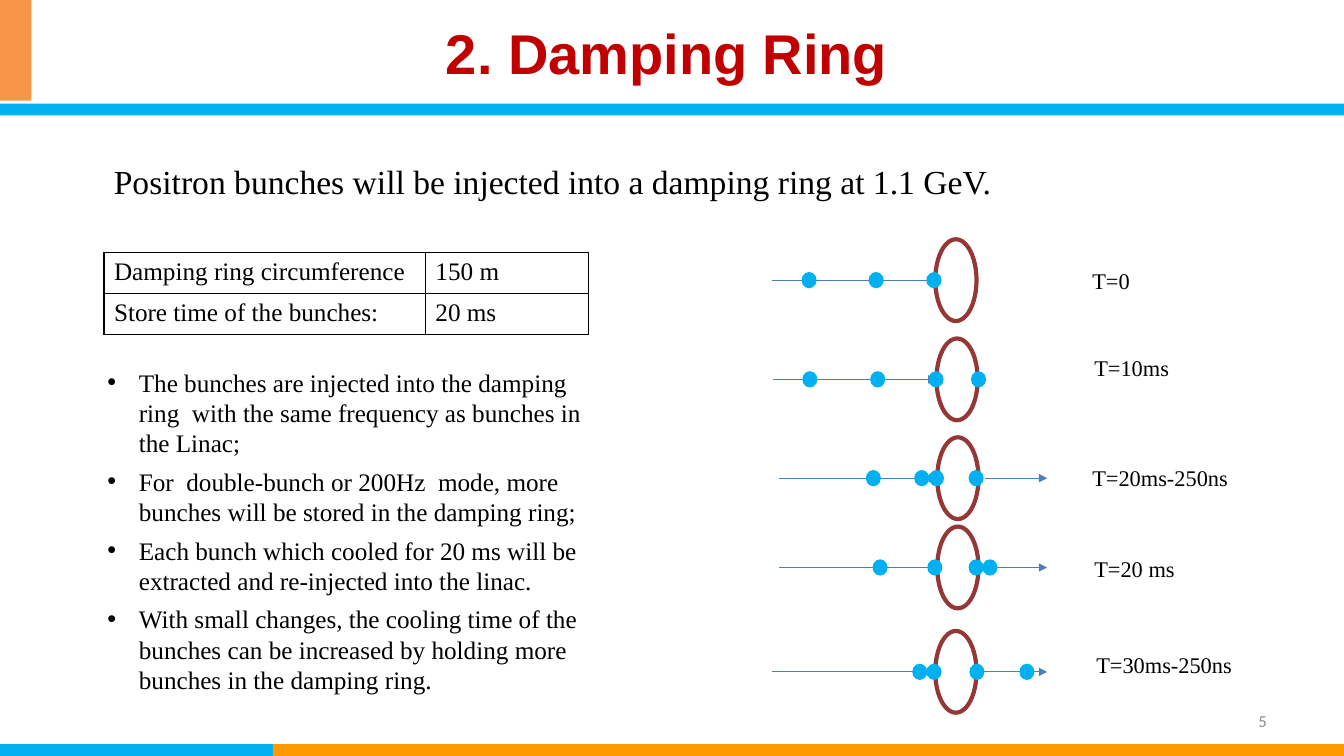
from dataclasses import dataclass
from lxml.etree import SubElement
from pptx import Presentation
from pptx.dml.color import RGBColor
from pptx.enum.shapes import MSO_CONNECTOR, MSO_SHAPE
from pptx.enum.text import MSO_ANCHOR, PP_ALIGN
from pptx.oxml import parse_xml
from pptx.oxml.ns import nsdecls, qn
from pptx.util import Cm, Pt


@dataclass(frozen=True)
class Theme:
    sky: str = "00B0F0"
    amber: str = "FF9900"
    peach: str = "F79646"
    red: str = "C00000"
    ring: str = "953735"
    beam: str = "4B7EBC"
    ink: str = "000000"
    grey: str = "8C8C8C"
    serif: str = "Times New Roman"
    head: int = 40
    lead: int = 24
    body: int = 18
    label: int = 16
    foot: int = 12


THEME = Theme()
WIDE, HIGH = 33.87, 19.05  # all lengths are in cm

TITLE = "2. Damping Ring"
LEAD = "Positron bunches will be injected into a damping ring at 1.1 GeV."
FACTS = [
    ("Damping ring circumference", "150 m"),
    ("Store time of the bunches:", "20 ms"),
]
COLS, ROW = (8.1, 4.12), 1.03
POINTS = [
    "The bunches are injected into the damping ring  with the same frequency as bunches in the Linac;",
    "For  double-bunch or 200Hz  mode, more bunches will be stored in the damping ring;",
    "Each bunch which cooled for 20 ms will be extracted and re-injected into the linac.",
    "With small changes, the cooling time of the bunches can be increased by holding more bunches in the damping ring.",
]
BANDS = [
    ((0, 18.75, WIDE, 0.3), THEME.sky),
    ((6.88, 18.75, WIDE - 6.88, 0.3), THEME.amber),
    ((0, 2.61, WIDE, 0.3), THEME.sky),
    ((0, 0, 0.79, 2.54), THEME.peach),
]
# label, its left and top, axis height, ring left, beam start, exit start, bunch centres
STAGES = [
    ("T=0", 27.28, 6.6, 7.06, 23.57, 19.46, None, (20.39, 22.08, 23.54)),
    ("T=10ms", 27.33, 8.79, 9.56, 23.6, 19.48, None,
     (20.41, 22.12, 23.59, 24.66)),
    ("T=20ms-250ns", 27.28, 11.56, 12.05, 23.62, 19.63, 24.82,
     (22.01, 23.23, 23.6, 24.6)),
    ("T=20 ms", 27.33, 13.87, 14.3, 23.62, 19.63, 24.82,
     (22.18, 23.56, 24.6, 24.95)),
    ("T=30ms-250ns", 27.38, 16.28, 16.93, 23.57, 19.46, 24.61,
     (23.18, 23.54, 24.62, 25.88)),
]
RING, BUNCH, EXIT = (1.04, 2.06), (0.38, 0.41), 26.39


def rgb(tint):
    return RGBColor.from_string(tint)


def style(para, size, tint=THEME.ink, face=THEME.serif, bold=False):
    looks = {"name": face, "size": Pt(size), "bold": bold}
    for run in para.runs:
        for key, value in looks.items():
            setattr(run.font, key, value)
        run.font.color.rgb = rgb(tint)


def text(slide, box, lines, size, **looks):
    frame = slide.shapes.add_textbox(*map(Cm, box)).text_frame
    frame.word_wrap = True
    frame.text = "\n".join(lines)
    for para in frame.paragraphs:
        style(para, size, **looks)
    return frame


def shape(slide, kind, box, fill=None, line=None):
    item = slide.shapes.add_shape(kind, *map(Cm, box))
    item.shadow.inherit = False
    if fill:
        item.fill.solid()
        item.fill.fore_color.rgb = rgb(fill)
    else:
        item.fill.background()
    if line:
        item.line.color.rgb = rgb(line)
        item.line.width = Pt(3)
    else:
        item.line.fill.background()


def oval(slide, mid, axis, size, **paint):
    """Draw an ellipse round its centre."""
    wide, high = size
    box = (mid - wide / 2, axis - high / 2, wide, high)
    shape(slide, MSO_SHAPE.OVAL, box, **paint)


def arrow(slide, start, end, axis):
    item = slide.shapes.add_connector(
        MSO_CONNECTOR.STRAIGHT, *map(Cm, (start, axis, end, axis)))
    item.line.color.rgb = rgb(THEME.beam)
    item.line.width = Pt(0.75)
    SubElement(item.line._get_or_add_ln(), qn("a:tailEnd"), type="triangle")
    SubElement(item._element.spPr, qn("a:effectLst"))


def stage(slide, label, left, top, axis, ring, start, leave, bunches):
    arrow(slide, start, ring, axis)
    if leave:
        arrow(slide, leave, EXIT, axis)
    oval(slide, ring + RING[0] / 2, axis, RING, line=THEME.ring)
    for mid in bunches:
        oval(slide, mid, axis, BUNCH, fill=THEME.sky)
    text(slide, (left, top, 4.83, 0.94), [label], THEME.label)


def border(cell):
    props = cell._tc.get_or_add_tcPr()
    for spot, side in enumerate("LRTB"):
        props.insert(spot, parse_xml(
            f'<a:ln{side} {nsdecls("a")} w="12700"><a:solidFill>'
            f'<a:srgbClr val="{THEME.ink}"/></a:solidFill></a:ln{side}>'))


def facts(slide):
    box = (2.62, 6.37, sum(COLS), ROW * len(FACTS))
    table = slide.shapes.add_table(
        len(FACTS), len(COLS), *map(Cm, box)).table
    table.first_row = table.horz_banding = False
    for col, wide in zip(table.columns, COLS):
        col.width = Cm(wide)
    for r, row in enumerate(FACTS):
        table.rows[r].height = Cm(ROW)
        for c, value in enumerate(row):
            cell = table.cell(r, c)
            cell.text = value
            style(cell.text_frame.paragraphs[0], THEME.body)
            cell.fill.background()
            border(cell)


def points(slide):
    frame = text(slide, (2.46, 9.12, 12.52, 8.59), POINTS, THEME.body)
    for para in frame.paragraphs:
        para.space_before = Pt(6)
        props = para._p.get_or_add_pPr()
        props.set("marL", str(Cm(0.79)))
        props.set("indent", str(-Cm(0.79)))
        SubElement(props, qn("a:buFont"), typeface="Arial")
        SubElement(props, qn("a:buChar"), char="•")


def title(slide):
    item = slide.shapes.title
    box = (1.85, 0.41, 29.9, 2.01)
    for key, value in zip(("left", "top", "width", "height"), box):
        setattr(item, key, Cm(value))
    item.text_frame.text = TITLE
    item.text_frame.vertical_anchor = MSO_ANCHOR.MIDDLE
    para = item.text_frame.paragraphs[0]
    para.alignment, para.line_spacing = PP_ALIGN.CENTER, 0.9
    style(para, THEME.head, THEME.red, "Arial", True)


def main():
    deck = Presentation()
    deck.slide_width, deck.slide_height = Cm(WIDE), Cm(HIGH)
    slide = deck.slides.add_slide(deck.slide_layouts[5])
    for box, fill in BANDS:
        shape(slide, MSO_SHAPE.RECTANGLE, box, fill=fill)
    title(slide)
    text(slide, (2.62, 3.94, 23.77, 1.27), [LEAD], THEME.lead)
    facts(slide)
    points(slide)
    for row in STAGES:
        stage(slide, *row)
    foot = text(slide, (24.28, 17.65, 7.9, 1.02), ["5"], THEME.foot,
                tint=THEME.grey, face="Calibri")
    foot.vertical_anchor = MSO_ANCHOR.MIDDLE
    foot.paragraphs[0].alignment = PP_ALIGN.RIGHT
    deck.save("out.pptx")


if __name__ == "__main__":
    main()
